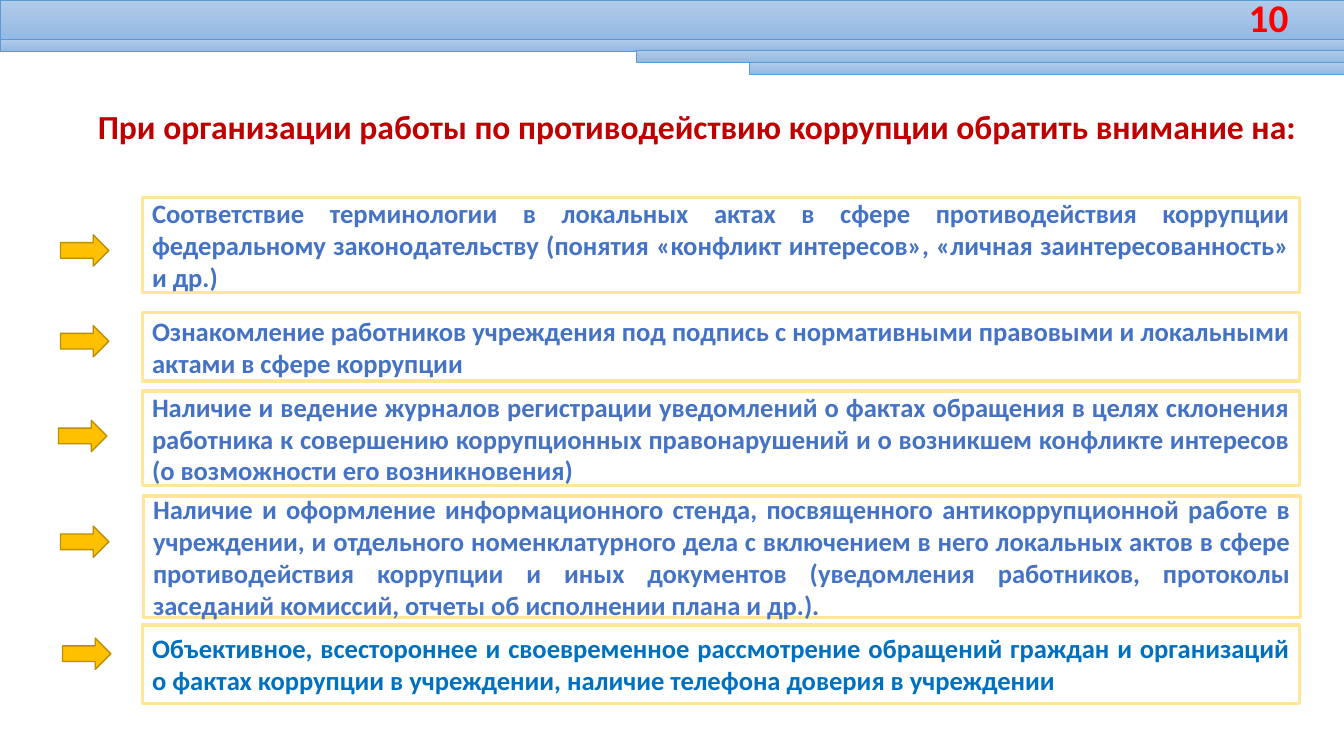
import pptx
import pptx.util
import pptx.dml.color
import pptx.enum.shapes
import pptx.enum.text

RGBColor = pptx.dml.color.RGBColor
Shape = pptx.enum.shapes.MSO_SHAPE
Align = pptx.enum.text.PP_ALIGN
Anchor = pptx.enum.text.MSO_ANCHOR
Pt = pptx.util.Pt

# Colours
SKY = RGBColor(0xB1, 0xCB, 0xE9)
HAZE = RGBColor(0x93, 0xB9, 0xE4)
EDGE = RGBColor(0x5B, 0x9B, 0xD5)
RED = RGBColor(0xFF, 0x00, 0x00)
WINE = RGBColor(0xC0, 0x00, 0x00)
CREAM = RGBColor(0xFF, 0xE6, 0x99)
GOLD = RGBColor(0xFF, 0xC0, 0x00)
BRONZE = RGBColor(0xBD, 0x8E, 0x00)
BLUE = RGBColor(0x44, 0x72, 0xC4)
AZURE = RGBColor(0x00, 0x70, 0xC0)

# Grid of square cells
WIDTH = pptx.util.Inches(13.333)
HEIGHT = pptx.util.Inches(7.5)
COLS, ROWS = 133.33, 75

# Header bands: left column, top row, height in rows; all run to the right edge
BANDS = [(0, 0, 3.9), (0, 3.9, 1.2), (63.1, 5, 1.2), (74.3, 6.2, 1.2)]

# Points: left column, top row, rows, arrow column, arrow row, colour, words
POINTS = [
    (14.1, 19.6, 9.4, 6, 23.3, BLUE,
     "Соответствие терминологии в локальных актах в сфере противодействия "
     "коррупции федеральному законодательству (понятия «конфликт интересов», "
     "«личная заинтересованность» и др.)"),
    (14.1, 31, 6.8, 6, 32.3, BLUE,
     "Ознакомление работников учреждения под подпись с нормативными правовыми "
     "и локальными актами в сфере коррупции"),
    (14.1, 38.8, 9.4, 5.8, 41.7, BLUE,
     "Наличие и ведение журналов регистрации уведомлений о фактах обращения в "
     "целях склонения работника к совершению коррупционных правонарушений и о "
     "возникшем конфликте интересов (о возможности его возникновения)"),
    (14.2, 49.2, 12.1, 6, 52.2, BLUE,
     "Наличие и оформление информационного стенда, посвященного "
     "антикоррупционной работе в учреждении, и отдельного номенклатурного дела "
     "с включением в него локальных актов в сфере противодействия коррупции и "
     "иных документов (уведомления работников, протоколы заседаний комиссий, "
     "отчеты об исполнении плана и др.)."),
    (14.1, 62, 7.8, 6.2, 63.3, AZURE,
     "Объективное, всестороннее и своевременное рассмотрение обращений граждан "
     "и организаций о фактах коррупции в учреждении, наличие телефона доверия "
     "в учреждении"),
]


def cells(left, top, wide, high):
    """Turn columns and rows into slide lengths."""
    return (round(left * WIDTH / COLS), round(top * HEIGHT / ROWS),
            round(wide * WIDTH / COLS), round(high * HEIGHT / ROWS))


def write(shape, words, size, color, align, anchor=Anchor.MIDDLE):
    frame = shape.text_frame
    frame.word_wrap = True
    frame.auto_size = pptx.enum.text.MSO_AUTO_SIZE.NONE
    frame.vertical_anchor = anchor
    para = frame.paragraphs[0]
    para.alignment = align
    para.line_spacing = 1.0
    run = para.add_run()
    run.text = words
    run.font.name = "Calibri"
    run.font.size = Pt(size)
    run.font.bold = True
    run.font.color.rgb = color


def draw(slide, kind, area, line, weight, fill=None):
    shape = slide.shapes.add_shape(kind, *cells(*area))
    shape.shadow.inherit = False
    shape.line.color.rgb = line
    shape.line.width = Pt(weight)
    if fill is None:
        shape.fill.background()
    else:
        shape.fill.solid()
        shape.fill.fore_color.rgb = fill
    return shape


def band(slide, left, top, high):
    shape = draw(slide, Shape.RECTANGLE, (left, top, COLS - left, high), EDGE, 0.5)
    shape.fill.gradient()
    shape.fill.gradient_angle = 270
    for stop, color in zip(shape.fill.gradient_stops, (SKY, HAZE)):
        stop.color.rgb = color


def point(slide, left, top, high, tail, row, color, words):
    box = draw(slide, Shape.RECTANGLE, (left, top, 114.8, high), CREAM, 2.25)
    write(box, words, size=19, color=color, align=Align.JUSTIFY)
    draw(slide, Shape.RIGHT_ARROW, (tail, row, 4.8, 3.1), BRONZE, 1, GOLD)


def main():
    deck = pptx.Presentation()
    deck.slide_width, deck.slide_height = WIDTH, HEIGHT
    slide = deck.slides.add_slide(deck.slide_layouts.get_by_name("Title Only"))

    # Header bands and page number
    for item in BANDS:
        band(slide, *item)
    number = slide.shapes.add_textbox(*cells(116.3, -0.5, 12.5, 4.4))
    write(number, "10", size=28, color=RED, align=Align.RIGHT)

    # Title
    title = slide.shapes.title
    title.left, title.top, title.width, title.height = cells(8.5, 10, 121.3, 5)
    write(title, "При организации работы по противодействию коррупции обратить внимание на:",
          size=24, color=WINE, align=Align.CENTER, anchor=Anchor.TOP)

    # Points with arrows
    for item in POINTS:
        point(slide, *item)

    deck.save("out.pptx")


if __name__ == "__main__":
    main()
